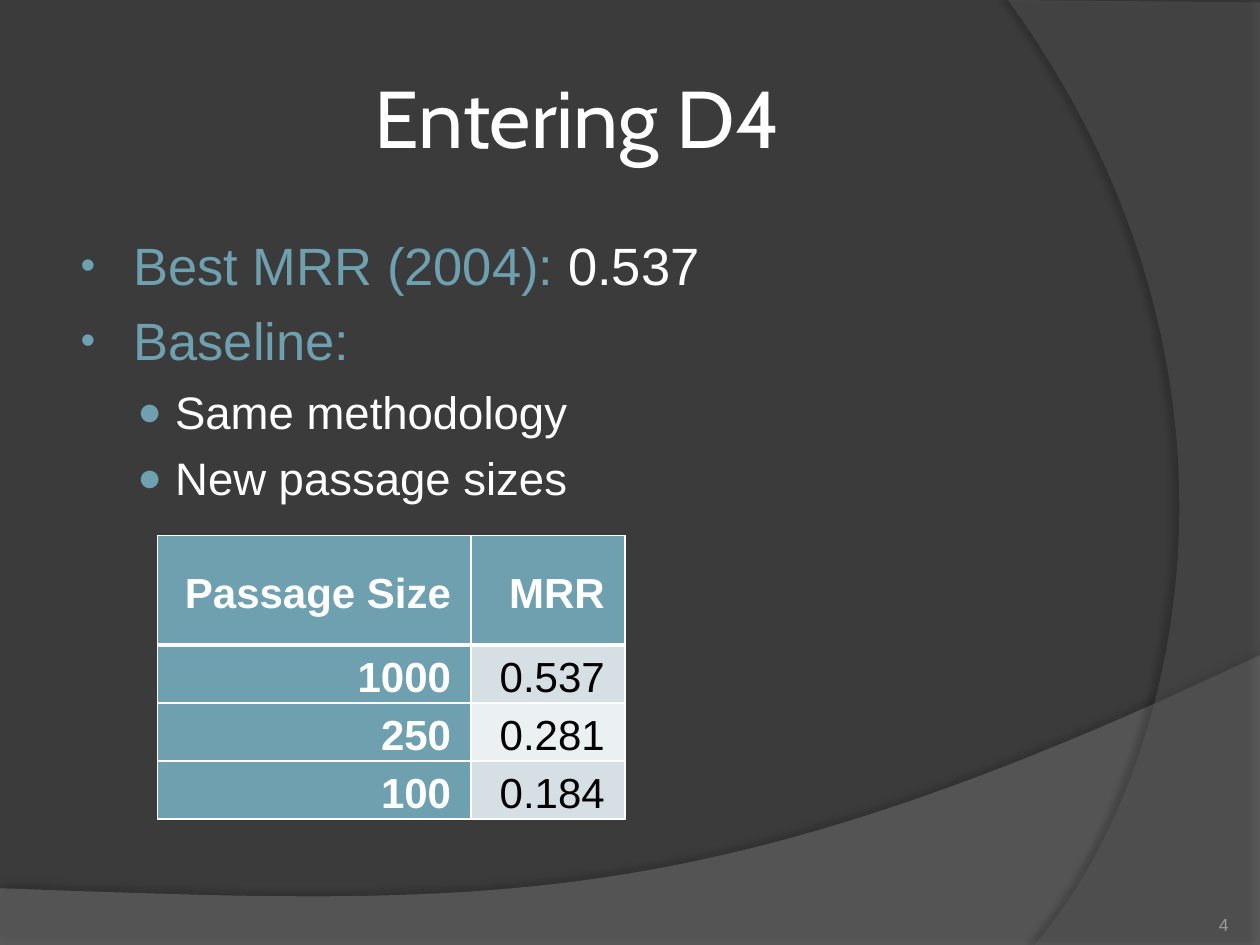
from pptx import Presentation
from pptx.dml.color import RGBColor
from pptx.enum.text import MSO_ANCHOR, MSO_AUTO_SIZE, PP_ALIGN
from pptx.oxml import parse_xml
from pptx.oxml.ns import nsdecls, qn
from pptx.util import Inches, Pt

LEFT, MID, RIGHT = PP_ALIGN.LEFT, PP_ALIGN.CENTER, PP_ALIGN.RIGHT
CENTER, BOTTOM, TOP = MSO_ANCHOR.MIDDLE, MSO_ANCHOR.BOTTOM, MSO_ANCHOR.TOP
FIXED = MSO_AUTO_SIZE.NONE

DARK = RGBColor(0x3B, 0x3B, 0x3B)
GRAY = RGBColor(0x7F, 0x7F, 0x7F)
SLATE = RGBColor(0x5E, 0x5E, 0x5E)
TEAL = RGBColor(0x6E, 0xA0, 0xB0)
PALE = RGBColor(0xD5, 0xDF, 0xE4)
LIGHT = RGBColor(0xEB, 0xF0, 0xF2)
ASH = RGBColor(0x9D, 0x9B, 0x9A)
WHITE = RGBColor(0xFF, 0xFF, 0xFF)
BLACK = RGBColor(0, 0, 0)

UNIT = Inches(0.25)  # the slide is a grid of 40 columns by 30 rows
SIDES = ("left", "top", "right", "bottom")


def node(text):
    """Make an element from a tag with its attributes and children."""
    head, mark, tail = text.partition(">")
    close = "/" if head.endswith("/") else ""
    head = head.rstrip("/")
    return parse_xml(f"{head} {nsdecls('a')}{close}{mark}{tail}")


def curve(a, b, c, d, steps=48):
    """Points on a cubic curve, without its start."""
    for i in range(1, steps + 1):
        t = i / steps
        s = 1 - t
        yield tuple(s**3 * p + 3 * s * s * t * q + 3 * s * t * t * r + t**3 * e
                    for p, q, r, e in zip(a, b, c, d))


class Deck:
    def __init__(self):
        self.prs = Presentation()
        self.prs.slide_width, self.prs.slide_height = 40 * UNIT, 30 * UNIT
        self.slide = self.prs.slides.add_slide(self.prs.slide_layouts[1])
        self.slide.background.fill.solid()
        self.slide.background.fill.fore_color.rgb = DARK
        self.bands = 0

    def place(self, shape, *box):
        names = ("left", "top", "width", "height")
        for name, value in zip(names, box):
            setattr(shape, name, round(value * UNIT))

    def frame(self, shape, anchor, pads):
        frame = shape.text_frame
        frame.word_wrap, frame.auto_size = True, FIXED
        frame.vertical_anchor = anchor
        for side, pad in zip(SIDES, pads):
            setattr(frame, "margin_" + side, Inches(pad))
        return frame

    def words(self, para, text, size, color, font="Arial", bold=False):
        run = para.add_run()
        run.text = text
        form = {"name": font, "size": Pt(size), "bold": bold}
        for name, value in form.items():
            setattr(run.font, name, value)
        run.font.color.rgb = color

    def band(self, points, color, alpha, shade, angle, gap):
        """Clear shape with a soft shadow, behind the text."""
        spots = [(round(x * UNIT), round(y * UNIT)) for x, y in points]
        pen = self.slide.shapes.build_freeform(*spots[0], scale=1.0)
        pen.add_line_segments(spots[1:], close=True)
        shape = pen.convert_to_shape()
        shape.fill.solid()
        shape.fill.fore_color.rgb = color
        shape.line.fill.background()
        shape.shadow.inherit = False
        props = shape.element.spPr
        props.find(qn("a:solidFill"))[0].append(
            node(f'<a:alpha val="{alpha * 1000}"/>'))
        props.find(qn("a:effectLst")).append(node(
            f'<a:outerShdw blurRad="{Pt(4)}" dist="{Pt(gap)}" '
            f'dir="{angle * 60000}" algn="ctr" rotWithShape="0">'
            f'<a:srgbClr val="{BLACK}"><a:alpha val="{shade * 1000}"/>'
            '</a:srgbClr></a:outerShdw>'))
        shape.element.getparent().insert(2 + self.bands, shape.element)
        self.bands += 1

    def title(self, text, *box):
        shape = self.slide.shapes.title
        self.place(shape, *box)
        para = self.frame(shape, CENTER, [0.05] * 4).paragraphs[0]
        para.alignment = MID
        self.words(para, text, 46, WHITE, "Cabin")

    def list(self, items, *box):
        """Each item is a level and its runs of text and colour."""
        looks = ((30, 0.46, -0.42, "•", 80), (26, 0.79, -0.3, "●", 90))
        shape = self.slide.placeholders[1]
        self.place(shape, *box)
        frame = self.frame(shape, TOP, (0.1, 0.05, 0.1, 0.05))
        for i, (level, runs) in enumerate(items):
            para = frame.add_paragraph() if i else frame.paragraphs[0]
            size, left, hang, sign, share = looks[level]
            form = {"level": level, "alignment": LEFT,
                    "space_before": Pt(7 if i else 0)}
            for name, value in form.items():
                setattr(para, name, value)
            props = para._p.get_or_add_pPr()
            props.set("marL", str(Inches(left)))
            props.set("indent", str(Inches(hang)))
            for mark in (f'<a:buClr><a:srgbClr val="{TEAL}"/></a:buClr>',
                         f'<a:buSzPct val="{share * 1000}"/>',
                         '<a:buFont typeface="Arial"/>',
                         f'<a:buChar char="{sign}"/>'):
                props.append(node(mark))
            for text, color in runs:
                self.words(para, text, size, color)

    def cell(self, cell, text, fill, color, bold, edges):
        for side, pad in zip(SIDES, (0.16, 0, 0.16, 0)):
            setattr(cell, "margin_" + side, Inches(pad))
        cell.vertical_anchor = CENTER
        para = cell.text_frame.paragraphs[0]
        para.alignment, para.line_spacing = RIGHT, 1.15
        self.words(para, text, 24, color, bold=bold)
        props = cell._tc.get_or_add_tcPr()
        for side, width in zip("LRTB", edges):
            props.append(node(
                f'<a:ln{side} w="{Pt(width)}"><a:solidFill>'
                f'<a:srgbClr val="{WHITE}"/></a:solidFill></a:ln{side}>'))
        cell.fill.solid()
        cell.fill.fore_color.rgb = fill

    def table(self, rows, left, top, widths, heights):
        shape = self.slide.shapes.add_table(
            len(rows), len(widths), round(left * UNIT), round(top * UNIT),
            Inches(sum(widths)), Inches(sum(heights)))
        table = shape.table
        table.first_row = table.horz_banding = False
        for parts, name, sizes in ((table.columns, "width", widths),
                                   (table.rows, "height", heights)):
            for part, size in zip(parts, sizes):
                setattr(part, name, Inches(size))
        for r, row in enumerate(rows):
            edges = (1, 1, 3 if r == 1 else 1, 3 if r == 0 else 1)
            for c, text in enumerate(row):
                head = r == 0 or c == 0
                fill = TEAL if head else PALE if r % 2 else LIGHT
                color = WHITE if head else BLACK
                self.cell(table.cell(r, c), text, fill, color, head, edges)

    def number(self, text, *box):
        shape = self.slide.shapes.add_textbox(0, 0, 0, 0)
        self.place(shape, *box)
        para = self.frame(shape, BOTTOM, [0] * 4).paragraphs[0]
        para.alignment = RIGHT
        self.words(para, text, 10, ASH)


def main():
    deck = Deck()

    # Backdrop: a low wave and a right arc
    wave = curve((40, 20.8), (22.36, 29.16), (15.64, 28.76), (0, 28.2))
    deck.band([(0, 30), (40, 30), (40, 20.8), *wave], GRAY, 45, 35, 270, 3.5)
    arc = curve((32.84, 30), (37.4, 24.76), (40.72, 12), (32, 0))
    deck.band([(40, 0.08), (40, 30), (32.84, 30), *arc], SLATE, 40, 45, 180, 4)

    # Title and list
    deck.title("Entering D4", 2, 1.2, 32.68, 5)
    deck.list([
        (0, [("Best MRR (2004): ", TEAL), ("0.537", WHITE)]),
        (0, [("Baseline:", TEAL)]),
        (1, [("Same methodology", WHITE)]),
        (1, [("New passage sizes", WHITE)]),
    ], 2, 7.2, 32.68, 19.6)

    # Results and slide number
    deck.table([("Passage Size", "MRR"), ("1000", "0.537"),
                ("250", "0.281"), ("100", "0.184")],
               5, 17, (2.49, 1.22), (0.87, 0.46, 0.46, 0.46))
    deck.number("4", 35.68, 28.08, 3.32, 1.6)
    deck.prs.save("out.pptx")


if __name__ == "__main__":
    main()
